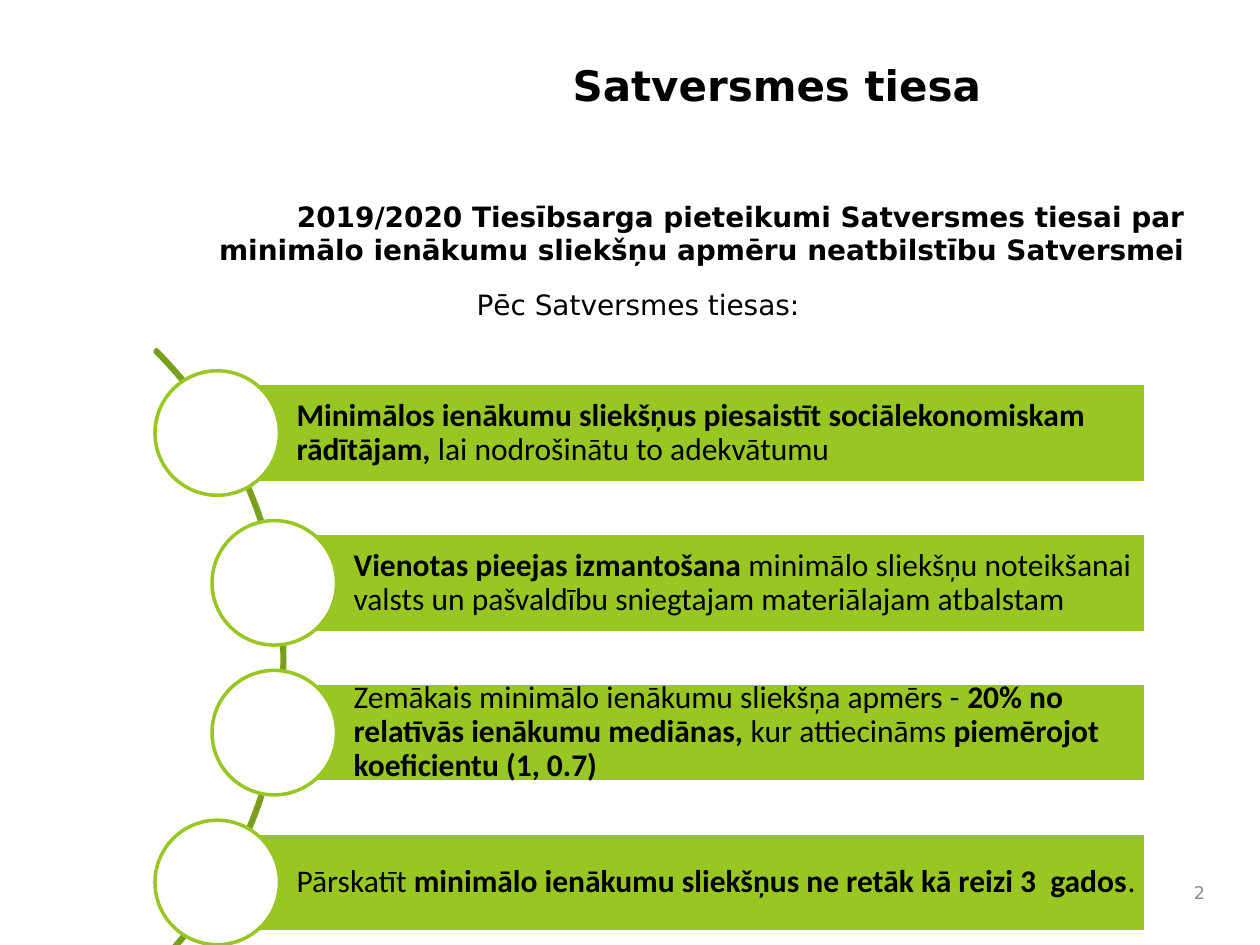
from dataclasses import dataclass

from pptx import Presentation
from pptx.dml.color import RGBColor
from pptx.enum.shapes import MSO_SHAPE
from pptx.enum.text import MSO_ANCHOR, PP_ALIGN
from pptx.util import Cm, Pt

LEFT, CENTER, RIGHT = PP_ALIGN.LEFT, PP_ALIGN.CENTER, PP_ALIGN.RIGHT
TOP, MIDDLE = MSO_ANCHOR.TOP, MSO_ANCHOR.MIDDLE
ARC, BAR, CIRCLE = MSO_SHAPE.BLOCK_ARC, MSO_SHAPE.RECTANGLE, MSO_SHAPE.OVAL


@dataclass(frozen=True)
class Theme:
    heading_font: str = "DejaVu Sans"
    bar_font: str = "Calibri"
    title_size: int = 24
    body_size: int = 16
    bar_size: int = 18
    number_size: int = 10
    line_width: int = 2
    black: str = "000000"
    white: str = "FFFFFF"
    gray: str = "8C8C8C"
    green: str = "98C723"
    dark_green: str = "7A9F1C"


@dataclass(frozen=True)
class Span:
    text: str
    bold: bool = False


@dataclass(frozen=True)
class Requirement:
    left: float
    spans: tuple[Span, ...]


THEME = Theme()

# Bars follow the arc: the outer two start further left than the inner two
OUTER_LEFT, INNER_LEFT, BAR_RIGHT = 4.38, 5.53, 23.1
FIRST_MIDDLE, PITCH = 8.73, 3.02
BAR_HEIGHT, CIRCLE_SIZE = 2.0, 2.51
BAR_INSETS = (1.6, 0.13, 0.13, 0.13)
BOX_INSETS = (0.25, 0.13, 0.25, 0.13)

REQUIREMENTS = (
    Requirement(OUTER_LEFT, (
        Span("Minimālos ienākumu sliekšņus piesaistīt sociālekonomiskam rādītājam, ", True),
        Span("lai nodrošinātu to adekvātumu"),
    )),
    Requirement(INNER_LEFT, (
        Span("Vienotas pieejas izmantošana", True),
        Span(" minimālo sliekšņu noteikšanai valsts un pašvaldību sniegtajam "
             "materiālajam atbalstam"),
    )),
    Requirement(INNER_LEFT, (
        Span("Zemākais minimālo ienākumu sliekšņa apmērs - "),
        Span("20% no relatīvās ienākumu mediānas, ", True),
        Span("kur attiecināms "),
        Span("piemērojot koeficientu (1, 0.7)", True),
    )),
    Requirement(OUTER_LEFT, (
        Span("Pārskatīt "),
        Span("minimālo ienākumu sliekšņus ne retāk kā reizi 3  gados", True),
        Span("."),
    )),
)


def write_text(shape, paragraphs, *, size: int, font: str = THEME.heading_font,
               color: str = THEME.black, anchor=TOP, insets=BOX_INSETS,
               line_spacing: float = 1.0, space_after: int = 0) -> None:
    """Fill a shape with (alignment, spans) paragraphs in one format."""
    frame = shape.text_frame
    frame.word_wrap = True
    frame.vertical_anchor = anchor
    (frame.margin_left, frame.margin_top,
     frame.margin_right, frame.margin_bottom) = map(Cm, insets)
    for index, (alignment, spans) in enumerate(paragraphs):
        para = frame.add_paragraph() if index else frame.paragraphs[0]
        para.alignment = alignment
        para.line_spacing = line_spacing
        para.space_after = Pt(space_after)
        for span in spans:
            run = para.add_run()
            run.text = span.text
            run.font.name = font
            run.font.size = Pt(size)
            run.font.bold = span.bold
            run.font.color.rgb = RGBColor.from_string(color)


def add_box(page, left: float, top: float, width: float, height: float):
    return page.shapes.add_textbox(Cm(left), Cm(top), Cm(width), Cm(height))


def add_figure(page, kind, left: float, top: float, width: float, height: float,
               *, line: str, fill: str | None = None):
    shape = page.shapes.add_shape(kind, Cm(left), Cm(top), Cm(width), Cm(height))
    shape.shadow.inherit = False
    if fill:
        shape.fill.solid()
        shape.fill.fore_color.rgb = RGBColor.from_string(fill)
    else:
        shape.fill.background()
    shape.line.color.rgb = RGBColor.from_string(line)
    shape.line.width = Pt(THEME.line_width)
    return shape


def add_requirement(page, requirement: Requirement, middle: float) -> None:
    left = requirement.left
    bar = add_figure(page, BAR, left, middle - BAR_HEIGHT / 2, BAR_RIGHT - left,
                     BAR_HEIGHT, line=THEME.white, fill=THEME.green)
    write_text(bar, [(LEFT, requirement.spans)], size=THEME.bar_size,
               font=THEME.bar_font, anchor=MIDDLE, insets=BAR_INSETS,
               line_spacing=0.9)
    radius = CIRCLE_SIZE / 2
    add_figure(page, CIRCLE, left - radius, middle - radius, CIRCLE_SIZE,
               CIRCLE_SIZE, line=THEME.green, fill=THEME.white)


def main() -> None:
    deck = Presentation()
    deck.slide_width, deck.slide_height = Cm(25.4), Cm(19.05)
    page = deck.slides.add_slide(deck.slide_layouts[6])

    # Title, introduction and page number
    write_text(add_box(page, 7.19, 1.07, 16.94, 2.87),
               [(CENTER, [Span("Satversmes tiesa", True)])], size=THEME.title_size)
    write_text(add_box(page, 1.6, 3.89, 22.53, 14.53), [
        (RIGHT, [Span("\t2019/2020 Tiesībsarga pieteikumi Satversmes tiesai par minimālo "
                      "ienākumu sliekšņu apmēru neatbilstību Satversmei", True)]),
        (CENTER, [Span("Pēc Satversmes tiesas:")]),
    ], size=THEME.body_size, space_after=12)
    write_text(add_box(page, 23.7, 17.58, 0.84, 0.84), [(RIGHT, [Span("2")])],
               size=THEME.number_size, color=THEME.gray, anchor=MIDDLE)

    # Arc behind the list, from 315 to 45 degrees
    arc = add_figure(page, ARC, -11.89, 4.47, 17.63, 17.63, line=THEME.dark_green)
    for index, value in enumerate((189, 27, 0.003)):
        arc.adjustments[index] = value

    # Requirements
    for index, requirement in enumerate(REQUIREMENTS):
        add_requirement(page, requirement, FIRST_MIDDLE + index * PITCH)

    deck.save("out.pptx")


if __name__ == "__main__":
    main()
